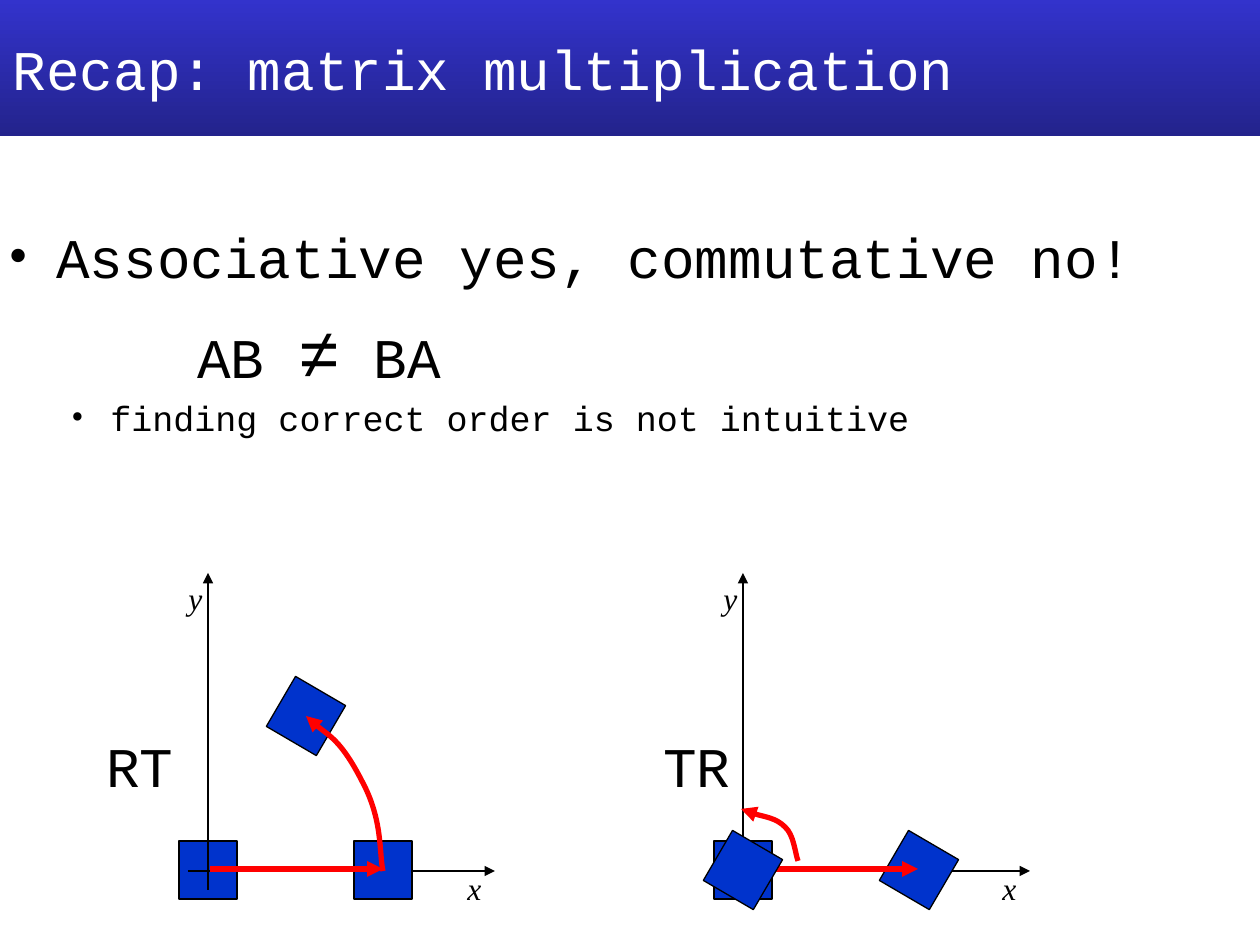
"""Build the slide that recaps matrix multiplication."""
from lxml.etree import SubElement
from pptx import Presentation
from pptx.dml.color import RGBColor
from pptx.enum.shapes import MSO_CONNECTOR, MSO_SHAPE
from pptx.enum.text import MSO_ANCHOR, MSO_AUTO_SIZE, PP_ALIGN
from pptx.oxml.ns import qn
from pptx.util import Pt

PX = 914400 / 126
MONO, SERIF = "Courier New", "Times New Roman"
BLACK, WHITE, RED, BLUE = "000000", "FFFFFF", "FF0000", "0033CC"
HEADING = {"name": MONO, "size": Pt(32)}
SYMBOL = {"name": MONO, "size": Pt(40)}
DETAIL = {"name": MONO, "size": Pt(20)}
AXIS_LABEL = {"name": SERIF, "size": Pt(18), "italic": True}
TURN = 300.3
PLOT_GAP = 535


def emu(*lengths):
    """Turn px lengths into EMU."""
    return [round(length * PX) for length in lengths]


def color(text):
    """Turn a hex string into a colour."""
    return RGBColor.from_string(text)


def assign(target, values):
    """Set each attribute of the target from a dict."""
    for name, value in values.items():
        setattr(target, name, value)


class SlideBuilder:
    """Hold the style and the current slide."""

    def __init__(self, deck):
        """Add a title-only slide to the deck."""
        self.page = deck.slides.add_slide(deck.slide_layouts[5])
        self.shapes = self.page.shapes

    def span(self, para, text, style, tint=BLACK):
        """Add a formatted run."""
        span = para.add_run()
        span.text = text
        assign(span.font, style)
        span.font.color.rgb = color(tint)

    def title(self, text, place, tints):
        """Place the title over a vertical gradient."""
        title = self.shapes.title
        assign(title, dict(zip(("left", "top", "width", "height"), emu(*place))))
        title.fill.gradient()
        title.fill.gradient_angle = 270
        for stop, tint in zip(title.fill.gradient_stops, tints):
            stop.color.rgb = color(tint)
        assign(title.text_frame, {"vertical_anchor": MSO_ANCHOR.MIDDLE,
                                  "auto_size": MSO_AUTO_SIZE.NONE})
        para = title.text_frame.paragraphs[0]
        para.alignment = PP_ALIGN.LEFT
        self.span(para, text, HEADING, WHITE)

    def body(self, place, items):
        """Add the outline text with its bullets and indents."""
        box = self.shapes.add_textbox(*emu(*place))
        frame = box.text_frame
        frame.word_wrap = True
        for index, (level, margin, indent, bullet, space, spans) in enumerate(items):
            para = frame.add_paragraph() if index else frame.paragraphs[0]
            assign(para, {"level": level, "space_before": Pt(space)})
            properties = para._p.get_or_add_pPr()
            for name, length in zip(("marL", "indent"), emu(margin, indent)):
                properties.set(name, str(length))
            if bullet:
                SubElement(properties, qn("a:buFont"), typeface=SERIF)
                SubElement(properties, qn("a:buChar"), char=bullet)
            for text, style in spans:
                self.span(para, text, style)

    def label(self, text, place, style, alignment=PP_ALIGN.LEFT):
        """Add a one-line label."""
        box = self.shapes.add_textbox(*emu(*place))
        assign(box.text_frame, {"word_wrap": False,
                                "auto_size": MSO_AUTO_SIZE.SHAPE_TO_FIT_TEXT})
        para = box.text_frame.paragraphs[0]
        para.alignment = alignment
        self.span(para, text, style)

    def outline(self, line, tint, width):
        """Format a line."""
        line.color.rgb = color(tint)
        line.width = Pt(width)

    def square(self, left, top, rotation=0):
        """Add a blue square."""
        shape = self.shapes.add_shape(MSO_SHAPE.RECTANGLE, *emu(left, top, 58, 58))
        shape.rotation = rotation
        shape.shadow.inherit = False
        shape.fill.solid()
        shape.fill.fore_color.rgb = color(BLUE)
        self.outline(shape.line, BLACK, 0.75)

    def arrow(self, start, end, tint=BLACK, width=0.75):
        """Add a straight arrow."""
        line = self.shapes.add_connector(MSO_CONNECTOR.STRAIGHT, *emu(*start, *end))
        self.outline(line.line, tint, width)
        SubElement(line.line._get_or_add_ln(), qn("a:tailEnd"), type="triangle")
        SubElement(line._element.spPr, qn("a:effectLst"))

    def curve(self, points):
        """Add a red Bezier arrow that points at its first point."""
        builder = self.shapes.build_freeform(*points[0], scale=PX)
        builder.add_line_segments(points[1:], close=False)
        shape = builder.convert_to_shape()
        shape.shadow.inherit = False
        shape.fill.background()
        self.outline(shape.line, RED, 3)
        SubElement(shape.line._get_or_add_ln(), qn("a:headEnd"), type="triangle")
        path = next(shape._element.iter(qn("a:path")))
        segments = path.findall(qn("a:lnTo"))
        for first in range(0, len(segments), 3):
            bezier = SubElement(path, qn("a:cubicBezTo"))
            for segment in segments[first:first + 3]:
                bezier.append(segment[0])
                path.remove(segment)

    def axes(self, left):
        """Add the x and y axes with their labels."""
        self.label("x", (left + 455, 863, 39, 50), AXIS_LABEL, PP_ALIGN.CENTER)
        self.arrow((left + 188, 871), (left + 495, 871))
        self.arrow((left + 208, 890), (left + 208, 573))
        self.label("y", (left + 176, 573, 39, 50), AXIS_LABEL, PP_ALIGN.CENTER)

    def plot(self, left, moved, turned, points):
        """Add a plot of a square that is translated and rotated."""
        self.square(left + 179, 841)
        self.axes(left)
        self.square(*moved)
        self.arrow((left + 210, 869), (left + 383, 869), RED, 3)
        self.square(*turned)
        self.curve(points)


def main():
    """Build and save the deck."""
    deck = Presentation()
    deck.slide_width, deck.slide_height = emu(1260, 945)
    slide = SlideBuilder(deck)
    slide.title("Recap: matrix multiplication", (0, 0, 1260, 136), ("3333CC", "23238C"))
    slide.body((-4, 216, 1260, 251), [
        (0, 48, -48, "•", 0, [("Associative yes, commutative no!", HEADING)]),
        (3, 220, -31, None, 11, [("AB ", HEADING), ("≠", SYMBOL), (" BA", HEADING)]),
        (1, 102, -39, "•", 2, [("finding correct order is not intuitive", DETAIL)]),
    ])
    slide.plot(0, (354, 841), (277, 687, TURN),
               [(306, 716), (315, 726), (341, 740), (362, 781),
                (383, 820), (379, 852), (383, 871)])
    slide.plot(PLOT_GAP, (890, 841, TURN), (714, 841, TURN),
               [(741, 809), (747, 813), (776, 818), (785, 827),
                (794, 835), (795, 853), (798, 861)])
    for text, left in (("RT", 94), ("TR", 651)):
        slide.label(text, (left, 725, 100, 79), HEADING)
    deck.save("out.pptx")


if __name__ == "__main__":
    main()
